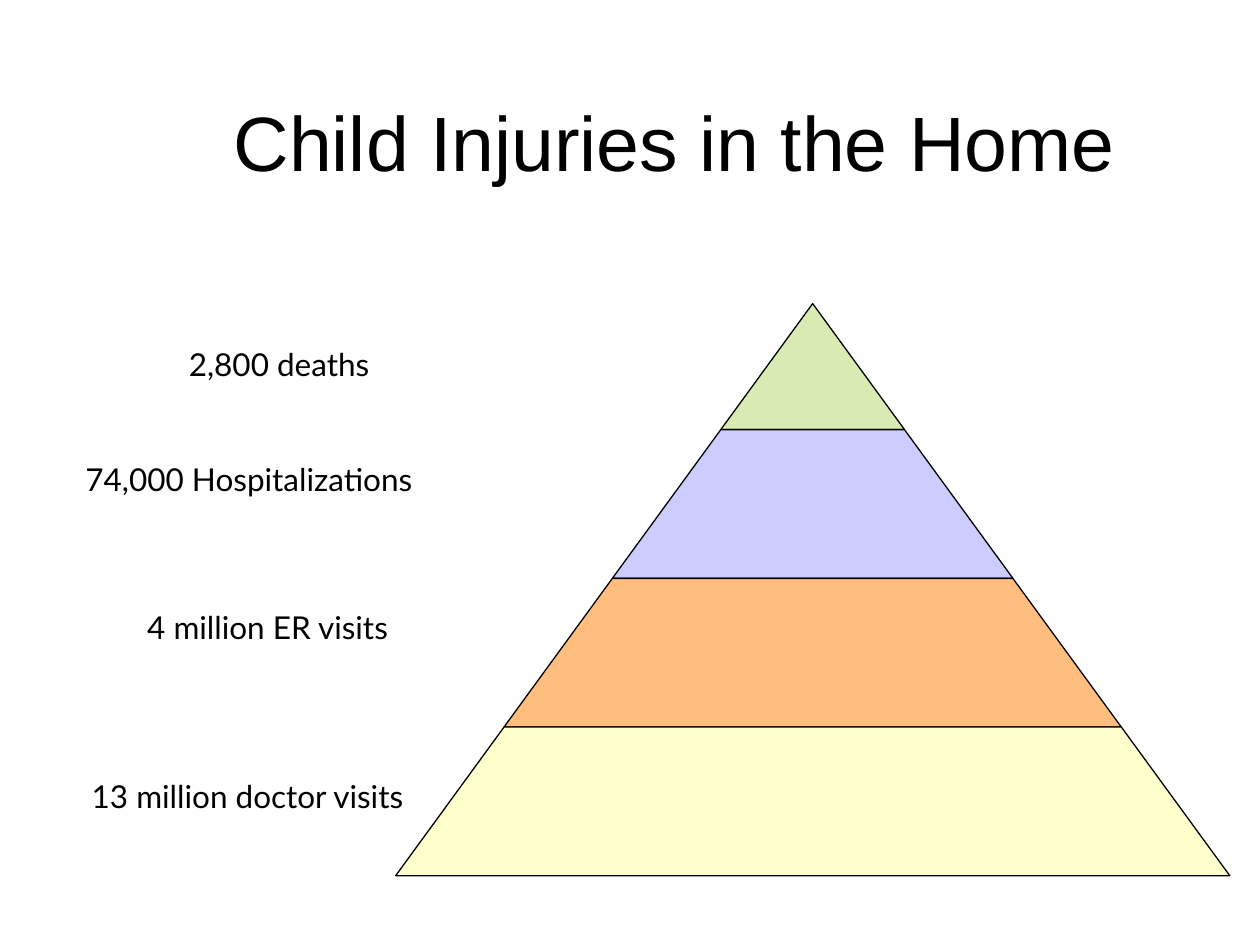
"""Build a slide with a four-tier pyramid of child injuries in the home."""
from dataclasses import dataclass

from pptx import Presentation
from pptx import util as u
from pptx.dml.color import RGBColor
from pptx.enum import text


@dataclass(frozen=True)
class Theme:
    ink: str = "000000"
    title_font: str = "Arial"
    label_font: str = "Lato"
    title_size: int = 44
    label_size: int = 18
    outline: float = 0.75


THEME = Theme()
TITLE = "Child Injuries in the Home"
TITLE_BOX = (0.98, 0.33, 8.75, 1.57)
TIERS = [
    {"label": "2,800 deaths", "fill": "D8EBB3", "height": 1.0, "box": (1.4, 2.69, 2.08, 0.4)},
    {"label": "74,000 Hospitalizations", "fill": "CCCCFF", "height": 1.18, "box": (0.58, 3.6, 2.9, 0.4)},
    {"label": "4 million ER visits", "fill": "FFBE7D", "height": 1.18, "box": (1.07, 4.78, 2.42, 0.4)},
    {"label": "13 million doctor visits", "fill": "FFFFCC", "height": 1.18, "box": (0.63, 6.12, 2.86, 0.42)},
]
APEX_X, APEX_Y = 6.45, 2.41
BASE_WIDTH = 6.62
PYRAMID_HEIGHT = sum(tier["height"] for tier in TIERS)


def write(paragraph, content, font, size):
    run = paragraph.add_run()
    run.text = content
    run.font.name = font
    run.font.size = u.Pt(size)
    run.font.color.rgb = RGBColor.from_string(THEME.ink)


def add_title(slide):
    title = slide.shapes.title
    title.left, title.top, title.width, title.height = map(u.Inches, TITLE_BOX)
    title.text_frame.vertical_anchor = text.MSO_ANCHOR.MIDDLE
    paragraph = title.text_frame.paragraphs[0]
    paragraph.alignment = text.PP_ALIGN.CENTER
    write(paragraph, TITLE, THEME.title_font, THEME.title_size)


def edge_points(depth):
    half = BASE_WIDTH / 2 * depth / PYRAMID_HEIGHT
    y = u.Inches(APEX_Y + depth)
    return [(u.Inches(APEX_X - half), y), (u.Inches(APEX_X + half), y)]


def add_tier(shapes, depth, tier):
    upper_left, upper_right = edge_points(depth)
    lower_left, lower_right = edge_points(depth + tier["height"])
    corners = [upper_left, upper_right, lower_right, lower_left]
    if depth == 0:
        corners.remove(upper_right)
    builder = shapes.build_freeform(*corners[0])
    builder.add_line_segments(corners[1:], close=True)
    shape = builder.convert_to_shape()
    shape.shadow.inherit = False
    shape.fill.solid()
    shape.fill.fore_color.rgb = RGBColor.from_string(tier["fill"])
    shape.line.color.rgb = RGBColor.from_string(THEME.ink)
    shape.line.width = u.Pt(THEME.outline)


def add_label(slide, tier):
    frame = slide.shapes.add_textbox(*map(u.Inches, tier["box"])).text_frame
    frame.word_wrap = True
    frame.auto_size = text.MSO_AUTO_SIZE.SHAPE_TO_FIT_TEXT
    write(frame.paragraphs[0], tier["label"], THEME.label_font, THEME.label_size)


def main():
    presentation = Presentation()
    presentation.slide_width, presentation.slide_height = u.Inches(10), u.Inches(7.5)
    slide = presentation.slides.add_slide(presentation.slide_layouts[5])
    add_title(slide)
    pyramid = slide.shapes.add_group_shape()
    depth = 0
    for tier in TIERS:
        add_tier(pyramid.shapes, depth, tier)
        depth += tier["height"]
    for tier in reversed(TIERS):
        add_label(slide, tier)
    presentation.save("out.pptx")


if __name__ == "__main__":
    main()
